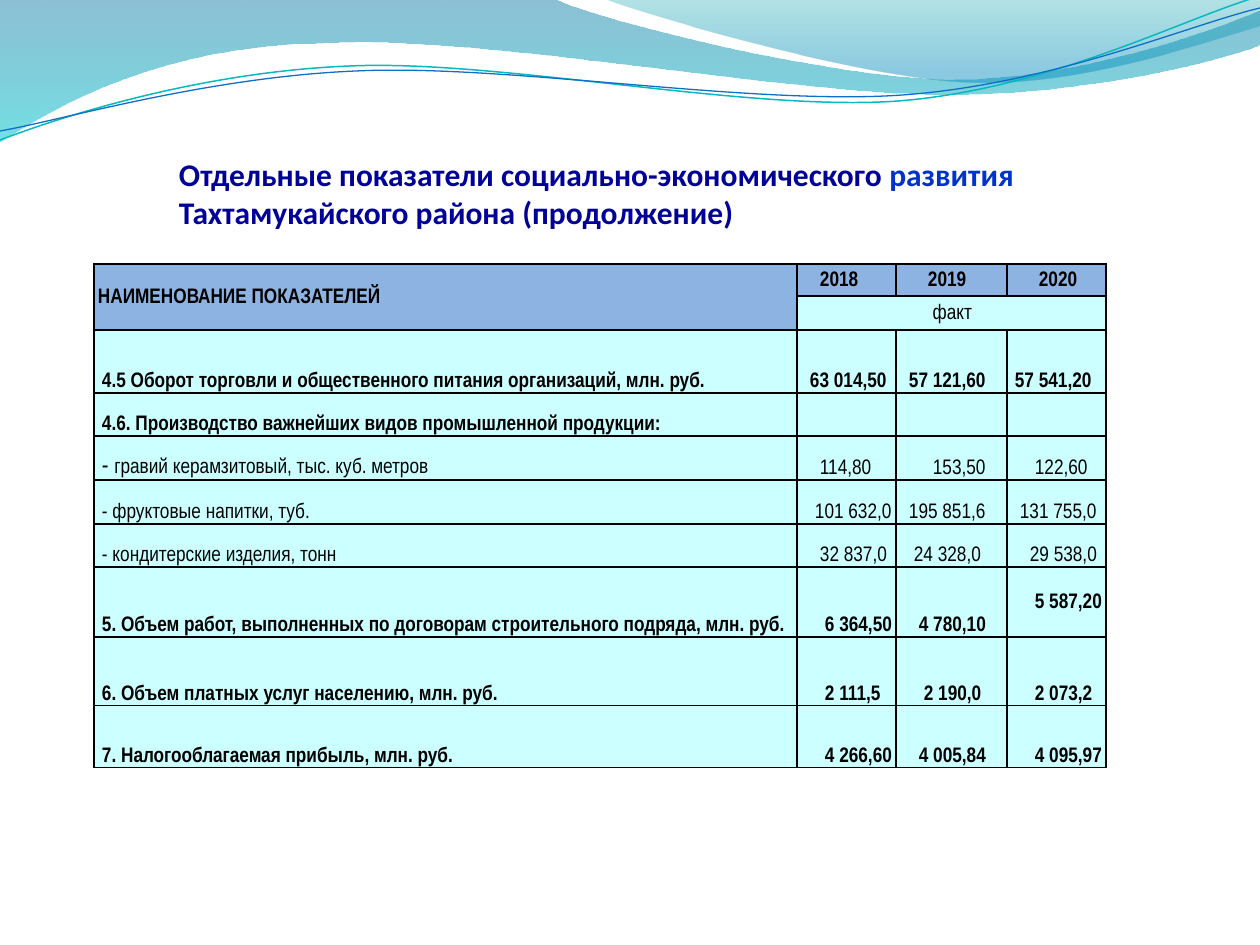
from lxml import etree
from pptx import Presentation, util as u
from pptx.dml.color import RGBColor
from pptx.enum import text
from pptx.oxml import ns

PX = 914400 / 126  # EMU in one px
FONT = "Arial Narrow"
HEAD, BODY, BLACK = "8DB3E2", "CCFFFF", "000000"
LEFT, CENTER = text.PP_ALIGN.LEFT, text.PP_ALIGN.CENTER
MIDDLE, BOTTOM = text.MSO_ANCHOR.MIDDLE, text.MSO_ANCHOR.BOTTOM

# Waves: a start point, then segments of one point (line) or three (curve)
WAVES = [
    ([(0, 0), [(554, -1)],
      [(600, 21), (837, 79), (955, 79)], [(1075, 79), (1207, 33), (1260, 11)],
      [(1261, 45)],
      [(1237, 55), (1096, 96), (940, 94)], [(784, 94), (481, 35), (324, 43)],
      [(163, 45), (58, 105), (-1, 142)], [(0, 0)]],
     [(0, "0074A1", 45), (1, "00C6CF", 55)]),
    ([(604, -1), [(641, 14), (859, 78), (969, 82)],
      [(1079, 87), (1211, 40), (1260, 26)], [(1260, 0)], [(604, -1)]],
     [(0, "00A1A9", 30), (0.8, "008BBF", 45)]),
]
STROKES = [
    ([(0, 140), [(60, 117), (199, 72), (349, 66)],
      [(498, 59), (747, 112), (898, 101)], [(1050, 89), (1182, 19), (1257, -3)]],
     "0AB8BF", 0.85),
    ([(0, 131), [(59, 121), (207, 77), (357, 71)],
      [(508, 64), (752, 106), (903, 95)], [(1053, 84), (1186, 26), (1260, 8)]],
     "0F6FC6", 0.75),
]

# Table: widths, heights, then rows of label, bold, (value, indent in spaces)
COLS = [703, 99, 111, 99]
HEIGHTS = [32, 34, 63, 43, 44, 44, 43, 70, 69, 62]
YEARS = [("2018", 4), ("2019", 6), ("2020", 6)]
ROWS = [
    ("4.5 Оборот торговли и общественного питания организаций, млн. руб.", True,
     [("63 014,50", 2), ("57 121,60", 2), ("57 541,20", 1)]),
    ("4.6. Производство важнейших видов промышленной продукции:", True, []),
    ("- гравий керамзитовый, тыс. куб. метров", False,
     [("114,80", 4), ("153,50", 7), ("122,60", 5)]),
    ("- фруктовые напитки, туб.", False,
     [("101 632,0", 3), ("195 851,6", 2), ("131 755,0", 2)]),
    ("- кондитерские изделия, тонн", False,
     [("32 837,0", 4), ("24 328,0", 3), ("29 538,0", 4)]),
    ("5. Объем работ, выполненных по договорам строительного подряда, млн. руб.", True,
     [("6 364,50", 5), ("4 780,10", 4), ("5 587,20", 5)]),
    ("6. Объем платных услуг населению, млн. руб.", True,
     [("2 111,5", 5), ("2 190,0", 5), ("2 073,2", 5)]),
    ("7. Налогооблагаемая прибыль, млн. руб.", True,
     [("4 266,60", 5), ("4 005,84", 4), ("4 095,97", 5)]),
]


def px(n):
    return u.Emu(round(n * PX))


def rgb(value):
    return RGBColor.from_string(value)


def set_all(obj, values):
    for name, value in values.items():
        setattr(obj, name, value)


def add_run(p, words, size, color, bold, font=FONT):
    r = p.add_run()
    r.text = words
    set_all(r.font, dict(size=u.Pt(size), bold=bold, name=font))
    r.font.color.rgb = rgb(color)


def add_path(slide, outline, x, y, close):
    start, *segments = outline
    points = [(px(x + a), px(y + b)) for a, b in [start, *sum(segments, [])]]
    builder = slide.shapes.build_freeform(*points[0])
    builder.add_line_segments(points[1:], close=close)
    s = builder.convert_to_shape()
    s.shadow.inherit = False
    # Join each three points of a curve into one cubic segment
    nodes = s.element.spPr.iter(ns.qn("a:lnTo"))
    for group in [[next(nodes) for _ in seg] for seg in segments]:
        if len(group) == 3:
            group[0].tag = ns.qn("a:cubicBezTo")
            for node in group[1:]:
                group[0].append(node[0])
                node.getparent().remove(node)
    return s


def add_header(slide, x, y):
    # Translucent waves
    for outline, stops in WAVES:
        s = add_path(slide, outline, x, y, True)
        s.line.fill.background()
        s.fill.gradient()
        s.fill.gradient_angle = 270
        for stop, (pos, color, _) in zip(s.fill.gradient_stops, stops):
            stop.position = pos
            stop.color.rgb = rgb(color)
        for clr, (_, _, alpha) in zip(s.element.spPr.iter(ns.qn("a:srgbClr")), stops):
            etree.SubElement(clr, ns.qn("a:alpha"), val=str(alpha * 1000))
    # Thin curves
    for outline, color, width in STROKES:
        s = add_path(slide, outline, x, y, False)
        s.fill.background()
        s.line.color.rgb = rgb(color)
        s.line.width = u.Pt(width)


def add_title(slide, x, y, w, h):
    tf = slide.shapes.add_textbox(px(x), px(y), px(w), px(h)).text_frame
    set_all(tf, dict(word_wrap=True, vertical_anchor=BOTTOM, margin_left=0,
                     margin_right=0, margin_top=px(6), margin_bottom=0))
    p = tf.paragraphs[0]
    add_run(p, "Отдельные показатели социально-экономического ", 18, "000099", True, "Calibri")
    add_run(p, "развития", 18, "0033CC", True, "Calibri")
    p.add_line_break()
    add_run(p, "Тахтамукайского района (продолжение)", 18, "000099", True, "Calibri")


def style_cell(cell, fill, anchor, indent=0):
    tc_pr = cell._tc.get_or_add_tcPr()
    for side in ("lnL", "lnR", "lnT", "lnB"):
        ln = etree.SubElement(tc_pr, ns.qn("a:" + side), w=str(u.Pt(1)))
        solid = etree.SubElement(ln, ns.qn("a:solidFill"))
        etree.SubElement(solid, ns.qn("a:srgbClr"), val=BLACK)
    cell.fill.solid()
    cell.fill.fore_color.rgb = rgb(fill)
    set_all(cell, dict(vertical_anchor=anchor, margin_left=px(4 + indent * 24 // 5),
                       margin_right=px(2), margin_top=px(1), margin_bottom=px(1)))


def fill_cell(cell, words, bold, fill=BODY, anchor=BOTTOM, indent=0, align=LEFT, after=0):
    style_cell(cell, fill, anchor, indent)
    if not words:
        return
    p = cell.text_frame.paragraphs[0]
    set_all(p, dict(alignment=align, line_spacing=1.15, space_after=u.Pt(after)))
    if words.startswith("- гравий"):  # larger dash
        add_run(p, "- ", 14, BLACK, bold)
        words = words[2:]
    add_run(p, words, 12, BLACK, bold)


def add_indicators(slide, x, y):
    table = slide.shapes.add_table(len(HEIGHTS), len(COLS), px(x), px(y),
                                   px(sum(COLS)), px(sum(HEIGHTS))).table
    set_all(table, dict(first_row=False, horz_banding=False))
    for col, w in zip(table.columns, COLS):
        col.width = px(w)
    for row, h in zip(table.rows, HEIGHTS):
        row.height = px(h)
    # Heading rows
    table.cell(0, 0).merge(table.cell(1, 0))
    table.cell(1, 1).merge(table.cell(1, 3))
    head = dict(anchor=MIDDLE, after=10)
    fill_cell(table.cell(0, 0), "НАИМЕНОВАНИЕ ПОКАЗАТЕЛЕЙ", True, HEAD, **head)
    for c, (year, indent) in enumerate(YEARS, 1):
        fill_cell(table.cell(0, c), year, True, HEAD, indent=indent, **head)
    fill_cell(table.cell(1, 1), "факт", False, align=CENTER, **head)
    for r, c in ((1, 0), (1, 2), (1, 3)):
        style_cell(table.cell(r, c), BODY if c else HEAD, MIDDLE)
    # Indicator rows
    for r, (label, bold, values) in enumerate(ROWS, 2):
        fill_cell(table.cell(r, 0), label, bold, indent=1)
        for c, (value, indent) in enumerate(values or [("", 0)] * 3, 1):
            fill_cell(table.cell(r, c), value, bold, indent=indent)
    table.cell(7, 3).margin_bottom = px(24)  # raised value


def main():
    prs = Presentation()
    set_all(prs, dict(slide_width=px(1260), slide_height=px(945)))
    slide = prs.slides.add_slide(prs.slide_layouts[6])
    add_header(slide, 0, 0)
    add_title(slide, 179, 136, 976, 95)
    add_indicators(slide, 94, 264)
    prs.save("out.pptx")


if __name__ == "__main__":
    main()
